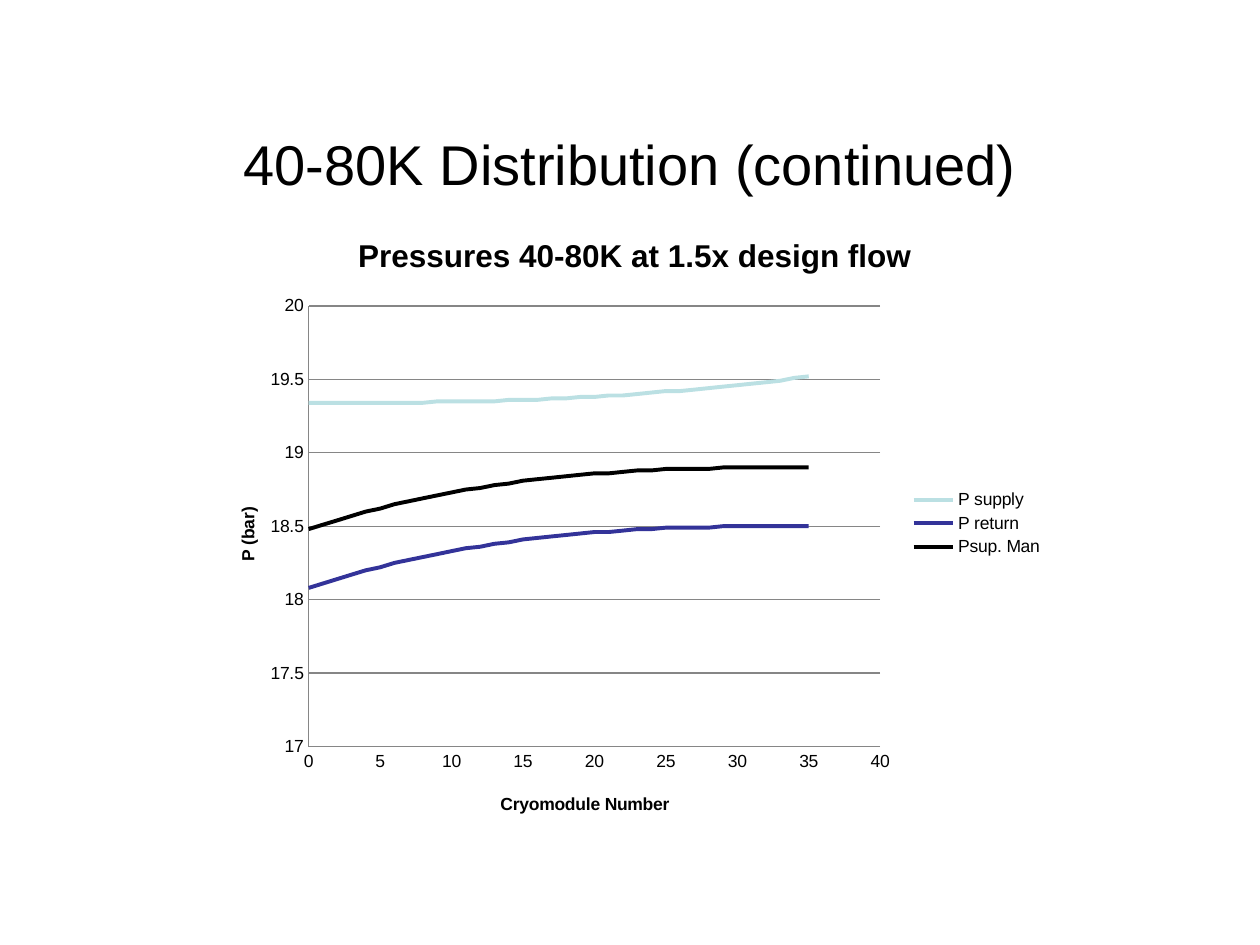
import pptx
import pptx.chart.data
import pptx.dml.color
import pptx.enum.chart
import pptx.enum.text
import pptx.oxml
import pptx.oxml.ns
import pptx.util

SCALE = 914400 // 126
FONT = "Arial"
BLACK, GREY = "000000", "868686"
LAST = 35
qn = pptx.oxml.ns.qn


def px(n):
    return pptx.util.Emu(n * SCALE)


def color(code):
    return pptx.dml.color.RGBColor.from_string(code)


def assign(obj, style):
    """Set each attribute named in a dict of format values."""
    for name, value in style.items():
        setattr(obj, name, value)


def style_font(font, size, bold=False):
    assign(font, {"name": FONT, "size": pptx.util.Pt(size), "bold": bold})
    font.color.rgb = color(BLACK)


def style_line(line, code, width):
    line.color.rgb = color(code)
    line.width = pptx.util.Pt(width)


def place(part, prior, box, spot, inner=False):
    """Lay out a chart part, after its prior child, at spot px within box."""
    node = part.find(qn("c:layout"))
    if node is not None:
        part.remove(node)
    layout = pptx.oxml.parse_xml(
        '<c:layout xmlns:c="http://schemas.openxmlformats.org/'
        'drawingml/2006/chart"><c:manualLayout/></c:layout>')
    values = [("layoutTarget", "inner")] if inner else []
    values += [("xMode", "edge"), ("yMode", "edge")]
    for name, n, full in zip("xywh", spot, (box[2], box[3]) * 2):
        values.append((name, round(n / full, 3)))
    for name, value in values:
        item = layout[0].makeelement(qn("c:" + name), {"val": str(value)})
        layout[0].append(item)
    before = part.find(qn("c:" + prior)) if prior else None
    part.insert(0 if before is None else part.index(before) + 1, layout)


def add_title(slide, box, text):
    frame = slide.shapes.add_textbox(*map(px, box)).text_frame
    assign(frame, {"word_wrap": True,
                   "vertical_anchor": pptx.enum.text.MSO_ANCHOR.MIDDLE})
    para = frame.paragraphs[0]
    assign(para, {"text": text, "alignment": pptx.enum.text.PP_ALIGN.CENTER})
    style_font(para.font, 32)


def set_title(owner, text, size, box, spot):
    owner.has_title = True
    title = owner.chart_title if hasattr(owner, "chart_title") else owner.axis_title
    para = title.text_frame.paragraphs[0]
    run = para.add_run()
    run.text = text
    style_font(run.font, size, True)
    place(title._element, "tx", box, spot)


def set_axis(axis, low, high, step, grid):
    marks = pptx.enum.chart.XL_TICK_MARK.NONE
    assign(axis, {"minimum_scale": low, "maximum_scale": high,
                  "major_unit": step, "has_major_gridlines": grid,
                  "major_tick_mark": marks, "minor_tick_mark": marks})
    assign(axis.tick_labels, {"number_format": "General",
                              "number_format_is_linked": False})
    style_font(axis.tick_labels.font, 10)
    style_line(axis.format.line, GREY, 0.75)
    if grid:
        style_line(axis.major_gridlines.format.line, GREY, 0.75)


def supply(n):
    return 19.34 + 0.18 * (n / LAST) ** 2.6


def back(n):
    return 18.5 - 0.42 * (1 - n / LAST) ** 2.7


def manifold(n):
    return back(n) + 0.4


def add_chart(slide, box):
    curves = [("P supply", supply, "BBE0E3"), ("P return", back, "333399"),
              ("Psup. Man", manifold, BLACK)]
    data = pptx.chart.data.XyChartData()
    for name, curve, _ in curves:
        series = data.add_series(name)
        for n in range(LAST, -1, -1):
            series.add_data_point(n, round(curve(n), 2))
    kind = pptx.enum.chart.XL_CHART_TYPE.XY_SCATTER_SMOOTH_NO_MARKERS
    chart = slide.shapes.add_chart(kind, *map(px, box), data).chart
    style_font(chart.font, 10)
    chart.plots[0].vary_by_categories = False
    for series, (_, _, code) in zip(chart.plots[0].series, curves):
        series.smooth = True
        series.marker.style = pptx.enum.chart.XL_MARKER_STYLE.NONE
        style_line(series.format.line, code, 2.25)

    set_axis(chart.category_axis, 0, 40, 5, False)
    set_axis(chart.value_axis, 17, 20, 0.5, True)
    set_title(chart, "Pressures 40-80K at 1.5x design flow", 18, box, (153, 19))
    set_title(chart.category_axis, "Cryomodule Number", 10, box, (298, 580))
    set_title(chart.value_axis, "P (bar)", 10, box, (34, 294))

    chart.has_legend = True
    assign(chart.legend, {"include_in_layout": False,
                          "position": pptx.enum.chart.XL_LEGEND_POSITION.RIGHT})
    style_font(chart.legend.font, 10)
    place(chart.legend._element, "legendPos", box, (708, 276, 140, 75))
    area = chart._chartSpace.find(".//" + qn("c:plotArea"))
    place(area, None, box, (110, 96, 572, 441), True)


def main():
    deck = pptx.Presentation()
    assign(deck, {"slide_width": px(1260), "slide_height": px(945)})
    slide = deck.slides.add_slide(deck.slide_layouts[6])
    add_title(slide, (94, 116, 1072, 94), "40-80K Distribution (continued)")
    add_chart(slide, (199, 210, 857, 627))
    deck.save("out.pptx")


if __name__ == "__main__":
    main()
